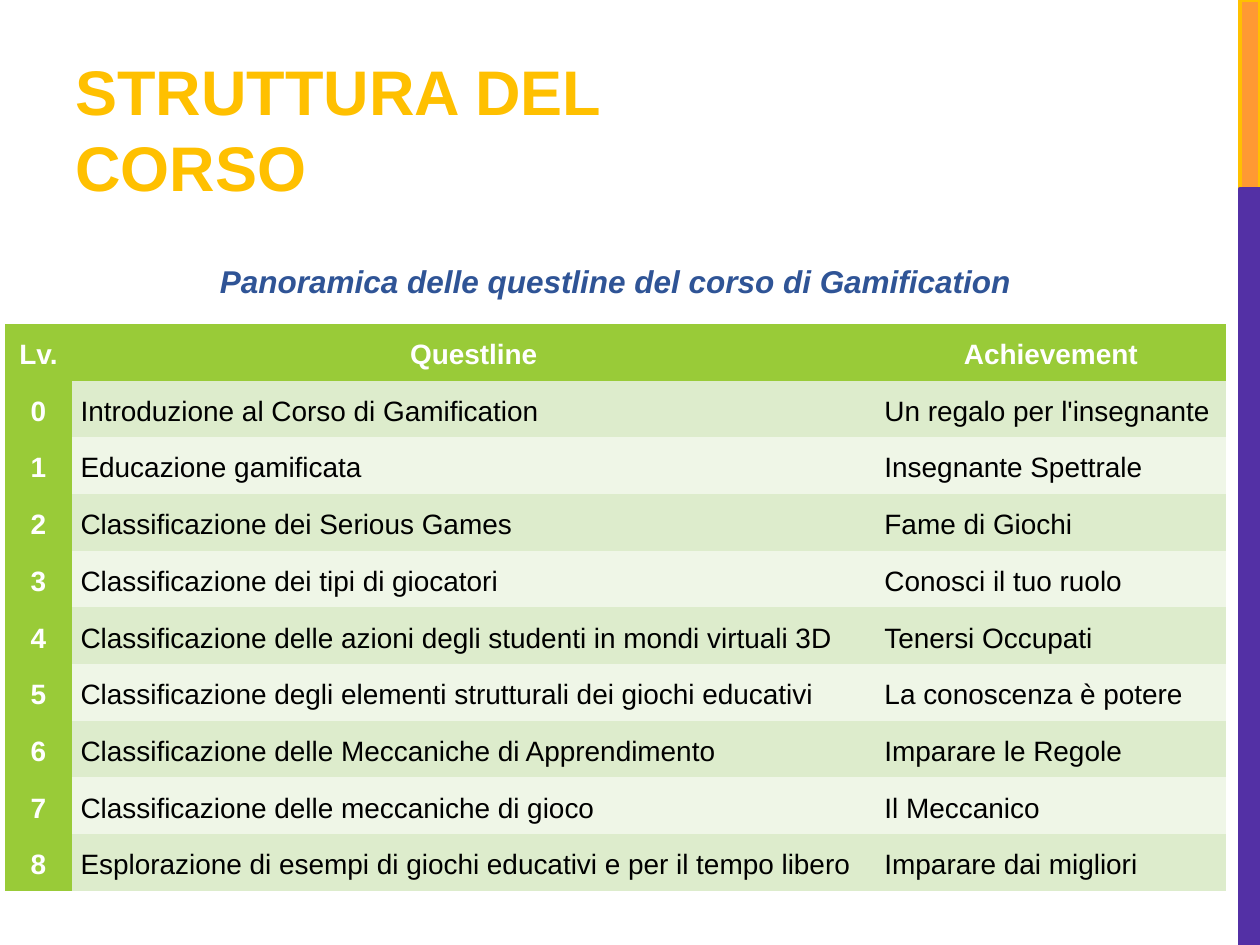
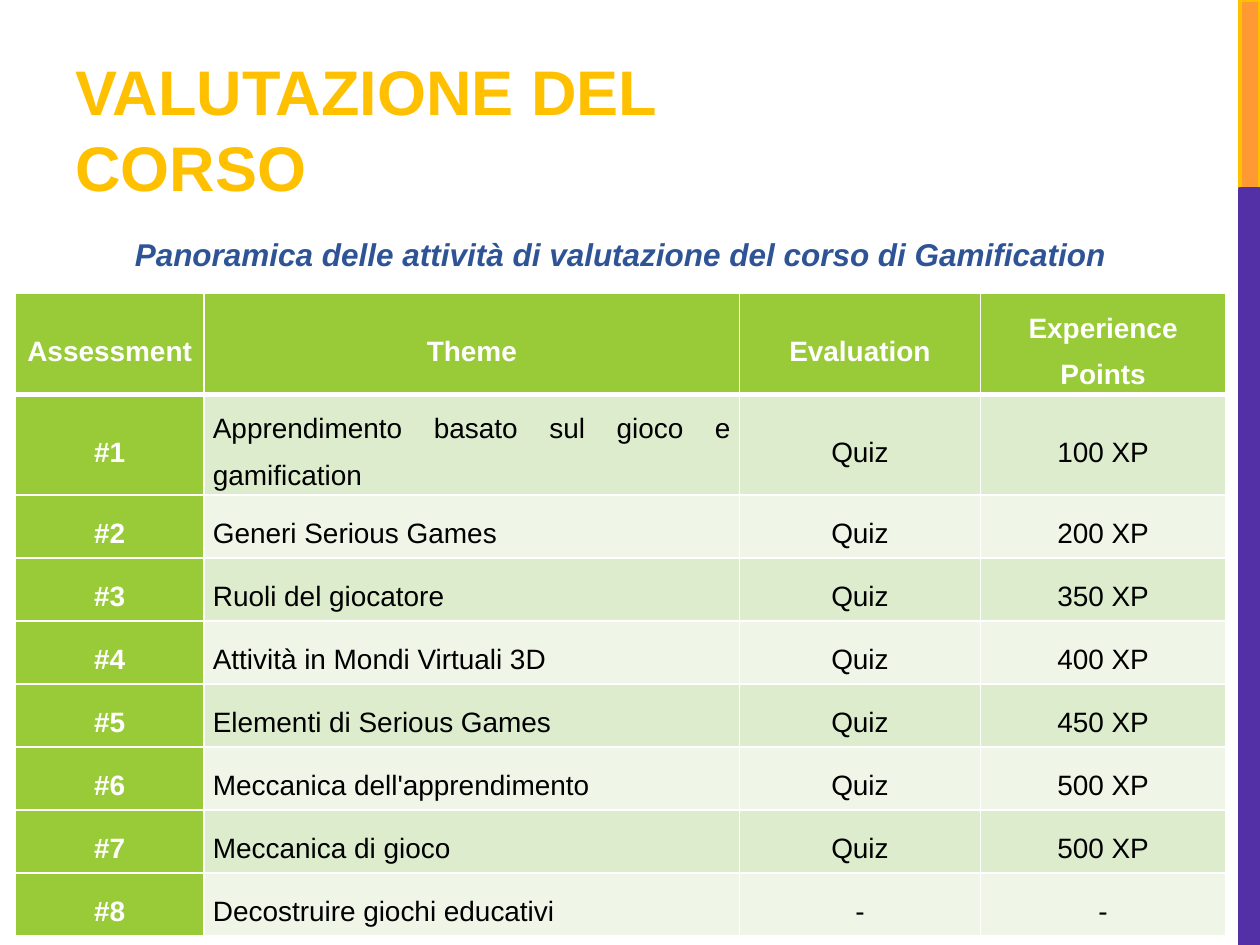
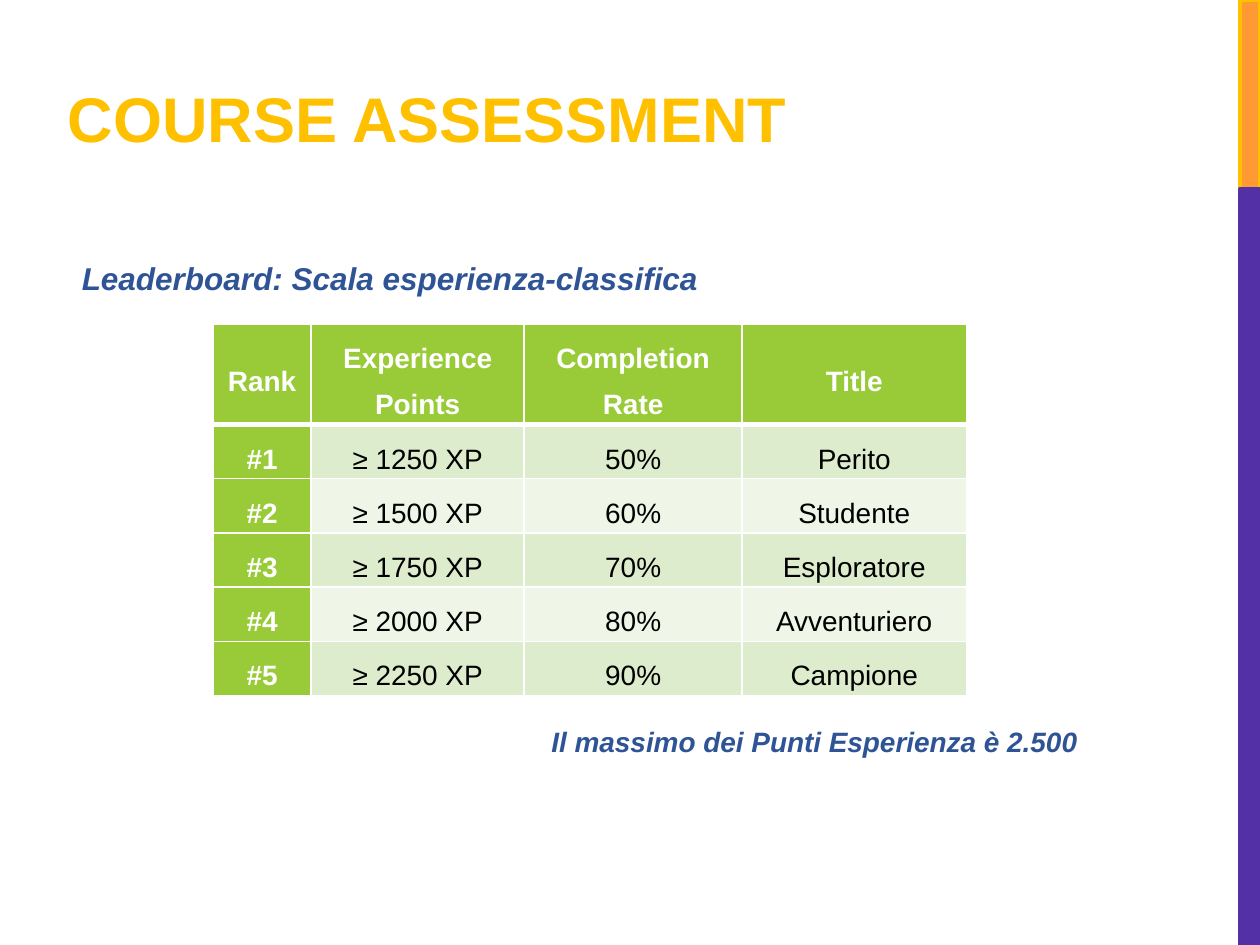
from lxml import etree
from pptx import Presentation
from pptx import util as u
from pptx.dml.color import RGBColor
from pptx.enum import shapes, text
from pptx.oxml.ns import qn

FONT = "Arial"
GOLD, ORANGE, PURPLE, BLUE = "FFC000", "FF9933", "5330A5", "2F5496"
GREEN, PALE, FAINT = "99CB38", "DDECCC", "EFF6E7"
WHITE, BLACK = "FFFFFF", "000000"
PLAIN = "{2D5ABB26-0587-4C30-8999-92F81FD0307C}"  # table style with no grid
ALIGN = {"l": text.PP_ALIGN.LEFT, "c": text.PP_ALIGN.CENTER,
         "j": text.PP_ALIGN.JUSTIFY}

COURSE = [
    ("Lv.", "Questline", "Achievement"),
    ("0", "Introduzione al Corso di Gamification", "Un regalo per l'insegnante"),
    ("1", "Educazione gamificata", "Insegnante Spettrale"),
    ("2", "Classificazione dei Serious Games", "Fame di Giochi"),
    ("3", "Classificazione dei tipi di giocatori", "Conosci il tuo ruolo"),
    ("4", "Classificazione delle azioni degli studenti in mondi virtuali 3D",
     "Tenersi Occupati"),
    ("5", "Classificazione degli elementi strutturali dei giochi educativi",
     "La conoscenza è potere"),
    ("6", "Classificazione delle Meccaniche di Apprendimento",
     "Imparare le Regole"),
    ("7", "Classificazione delle meccaniche di gioco", "Il Meccanico"),
    ("8", "Esplorazione di esempi di giochi educativi e per il tempo libero",
     "Imparare dai migliori"),
]
TESTS = [
    ("Assessment", "Theme", "Evaluation", "Experience Points"),
    ("#1", "Apprendimento basato sul gioco e gamification", "Quiz", "100 XP"),
    ("#2", "Generi Serious Games", "Quiz", "200 XP"),
    ("#3", "Ruoli del giocatore", "Quiz", "350 XP"),
    ("#4", "Attività in Mondi Virtuali 3D", "Quiz", "400 XP"),
    ("#5", "Elementi di Serious Games", "Quiz", "450 XP"),
    ("#6", "Meccanica dell'apprendimento", "Quiz", "500 XP"),
    ("#7", "Meccanica di gioco", "Quiz", "500 XP"),
    ("#8", "Decostruire giochi educativi", "-", "-"),
]
RANKS = [
    ("Rank", "Experience Points", "Completion Rate", "Title"),
    ("#1", "≥ 1250 XP", "50%", "Perito"),
    ("#2", "≥ 1500 XP", "60%", "Studente"),
    ("#3", "≥ 1750 XP", "70%", "Esploratore"),
    ("#4", "≥ 2000 XP", "80%", "Avventuriero"),
    ("#5", "≥ 2250 XP", "90%", "Campione"),
]


def color(code):
    return RGBColor.from_string(code)


def inches(box):
    return [u.Inches(v) for v in box]


def write(frame, words, size=16, ink=BLACK, bold=False, italic=False,
          align="c", lead=None):
    par = frame.paragraphs[0]
    par.alignment = ALIGN[align]
    if lead:
        par.line_spacing = lead
    run = par.add_run()
    run.text = words
    font = run.font
    font.name, font.size = FONT, u.Pt(size)
    font.bold, font.italic = bold, italic
    font.color.rgb = color(ink)


def title(slide, box, words):
    frame = slide.shapes.add_textbox(*inches(box)).text_frame
    frame.word_wrap = True
    frame.vertical_anchor = text.MSO_ANCHOR.BOTTOM
    write(frame, words, size=36, ink=GOLD, bold=True, align="l")


def caption(slide, box, words, size=18):
    frame = slide.shapes.add_textbox(*inches(box)).text_frame
    frame.word_wrap = True
    frame.auto_size = text.MSO_AUTO_SIZE.SHAPE_TO_FIT_TEXT
    write(frame, words, size=size, ink=BLUE, bold=True, italic=True, lead=1.5)


def band(slide, left, top, height, fill, edge):
    bar = slide.shapes.add_shape(shapes.MSO_SHAPE.RECTANGLE,
                                 *inches((left, top, 0.16, height)))
    bar.shadow.inherit = False
    bar.fill.solid()
    bar.fill.fore_color.rgb = color(fill)
    bar.line.color.rgb = color(edge)
    bar.line.width = u.Pt(2.25)


def border(cell, top, bottom):
    """White rules around a cell, with widths in points."""
    props = cell._tc.get_or_add_tcPr()
    for side, width in (("L", 1), ("R", 1), ("T", top), ("B", bottom)):
        line = etree.SubElement(props, qn("a:ln" + side), w=str(u.Pt(width)))
        fill = etree.SubElement(line, qn("a:solidFill"))
        etree.SubElement(fill, qn("a:srgbClr"), val=WHITE)


def grid(slide, left, top, cols, rows, data, aligns, ruled=True):
    frame = slide.shapes.add_table(len(rows), len(cols),
                                   *inches((left, top, sum(cols), sum(rows))))
    table = frame.table
    table._tbl.tblPr.find(qn("a:tableStyleId")).text = PLAIN
    for col, width in zip(table.columns, cols):
        col.width = u.Inches(width)
    for row, height in zip(table.rows, rows):
        row.height = u.Inches(height)
    for r, line in enumerate(data):
        for c, words in enumerate(line):
            cell = table.cell(r, c)
            cell.margin_left = cell.margin_right = u.Inches(0.07)
            cell.margin_top = cell.margin_bottom = 0
            if ruled:
                cell.vertical_anchor = text.MSO_ANCHOR.MIDDLE
                border(cell, top=3 if r == 1 else 1, bottom=3 if r == 0 else 1)
            head = r == 0 or c == 0
            cell.fill.solid()
            cell.fill.fore_color.rgb = color(
                GREEN if head else PALE if r % 2 else FAINT)
            write(cell.text_frame, words, ink=WHITE if head else BLACK,
                  bold=head, align="c" if r == 0 else aligns[c], lead=1.5)


def page(deck, words, box=(0.5, 0.17, 6.33, 1.5)):
    """A slide with the side bands and the title."""
    slide = deck.slides.add_slide(deck.slide_layouts[6])
    band(slide, 9.84, 0, 1.5, ORANGE, GOLD)
    band(slide, 9.84, 1.5, 6, PURPLE, PURPLE)
    title(slide, box, words)
    return slide


def main():
    deck = Presentation()
    deck.slide_width, deck.slide_height = u.Inches(10), u.Inches(7.5)

    # Course structure
    slide = page(deck, "STRUTTURA DEL CORSO")
    grid(slide, 0.04, 2.57, (0.53, 6.38, 2.78), [0.45] * 10, COURSE, "cjj",
         ruled=False)
    caption(slide, (0.04, 1.88, 9.69, 0.56),
            "Panoramica delle questline del corso di Gamification")

    # Assessment activities
    slide = page(deck, "VALUTAZIONE DEL CORSO")
    grid(slide, 0.12, 2.33, (1.5, 4.25, 1.91, 1.95), [0.5] * 9, TESTS, "cjcc")
    caption(slide, (0.12, 1.67, 9.61, 0.56),
            "Panoramica delle attività di valutazione del corso di Gamification")

    # Leaderboard
    slide = page(deck, "COURSE ASSESSMENT", (0.44, 0.5, 6.33, 0.78))
    grid(slide, 1.69, 2.57, (0.78, 1.69, 1.73, 1.78), [0.7] + [0.43] * 5,
         RANKS, "cccc")
    caption(slide, (0.11, 1.86, 5.97, 0.4),
            "Leaderboard: Scala esperienza-classifica")
    caption(slide, (4.18, 5.57, 4.57, 0.37),
            "Il massimo dei Punti Esperienza è 2.500", size=16)

    deck.save("out.pptx")


if __name__ == "__main__":
    main()
